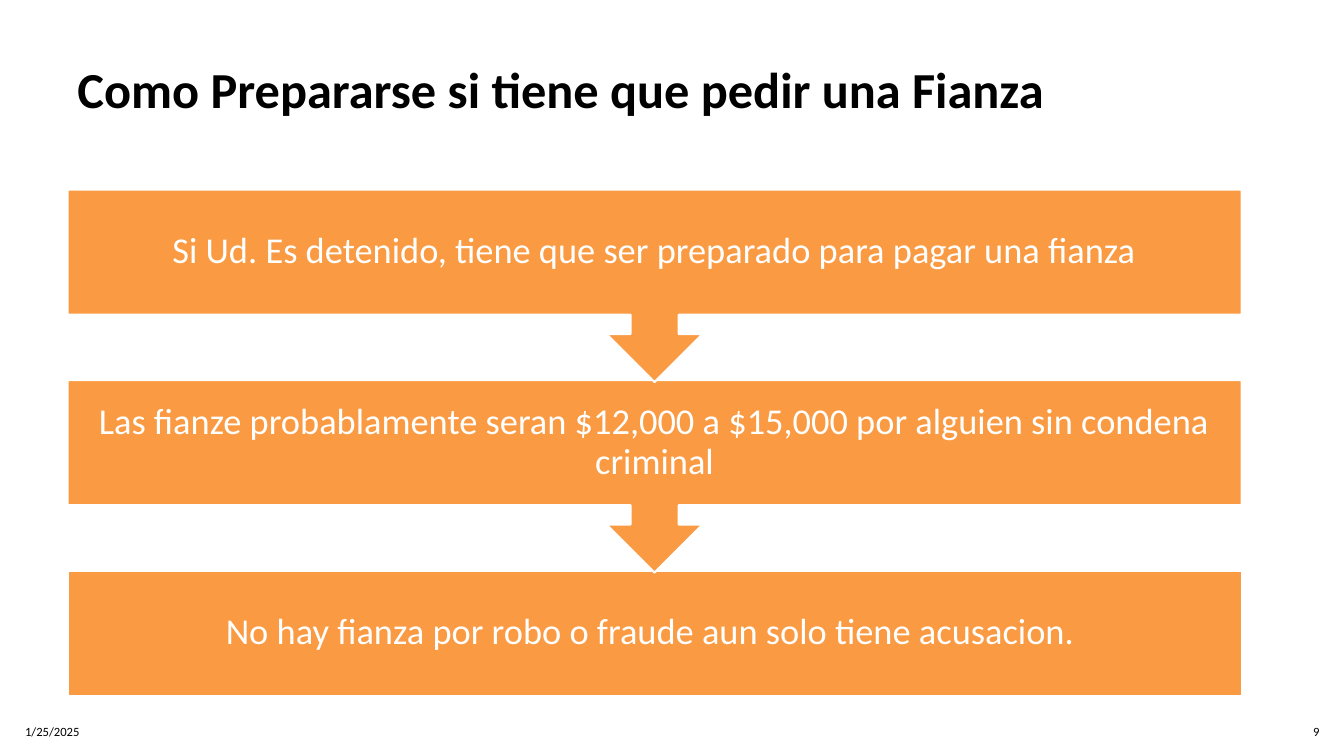
from dataclasses import dataclass

from pptx import Presentation
from pptx.dml.color import RGBColor
from pptx.enum.shapes import MSO_SHAPE
from pptx.enum.text import MSO_ANCHOR, PP_ALIGN
from pptx.slide import Slide
from pptx.text.text import TextFrame
from pptx.util import Pt


@dataclass(frozen=True)
class Theme:
    font: str = "Calibri"
    ink: RGBColor = RGBColor(0, 0, 0)
    paper: RGBColor = RGBColor(255, 255, 255)
    orange: RGBColor = RGBColor(0xFA, 0x9A, 0x42)
    title_size: float = 36
    step_size: float = 26
    footer_size: float = 9


@dataclass(frozen=True)
class Box:
    left: float
    top: float
    width: float
    height: float

    def lengths(self) -> tuple[Pt, Pt, Pt, Pt]:
        return Pt(self.left), Pt(self.top), Pt(self.width), Pt(self.height)


@dataclass(frozen=True)
class Footer:
    text: str
    box: Box
    align: PP_ALIGN


THEME = Theme()
CONTENT_LEFT, CONTENT_WIDTH = 48.2, 838.8
STEP_TOP, STEP_PITCH = 135.4, 136.1
STEP_HEIGHT, CALLOUT_HEIGHT = 89.3, 137.5
STEP_INSET = 14.4

TITLE = "Como Prepararse si tiene que pedir una Fianza"
STEPS = [
    "Si Ud. Es detenido, tiene que ser preparado para pagar una fianza",
    "Las fianze probablamente seran $12,000 a $15,000 por alguien sin condena criminal",
    "No hay fianza por robo o fraude aun solo tiene acusacion. ",
]
FOOTERS = [
    Footer("1/25/2025", Box(10.8, 508.3, 275, 28.8), PP_ALIGN.LEFT),
    Footer("9", Box(915.8, 508.3, 33.8, 28.8), PP_ALIGN.RIGHT),
]


def write_text(frame: TextFrame, text: str, *, size: float, color: RGBColor = THEME.ink,
               bold: bool = False, align: PP_ALIGN = PP_ALIGN.LEFT,
               anchor: MSO_ANCHOR = MSO_ANCHOR.MIDDLE, line_spacing: float = 1.0,
               space_after: float = 0) -> None:
    frame.word_wrap = True
    frame.vertical_anchor = anchor
    paragraph = frame.paragraphs[0]
    paragraph.alignment = align
    paragraph.line_spacing = line_spacing
    paragraph.space_after = Pt(space_after)
    run = paragraph.add_run()
    run.text = text
    run.font.name = THEME.font
    run.font.size = Pt(size)
    run.font.bold = bold
    run.font.color.rgb = color


def add_step(slide: Slide, index: int, text: str) -> None:
    """Draw one step; every step but the last points down to the next."""
    is_last = index == len(STEPS) - 1
    kind = MSO_SHAPE.RECTANGLE if is_last else MSO_SHAPE.DOWN_ARROW_CALLOUT
    box = Box(CONTENT_LEFT, STEP_TOP + index * STEP_PITCH, CONTENT_WIDTH,
              STEP_HEIGHT if is_last else CALLOUT_HEIGHT)
    shape = slide.shapes.add_shape(kind, *box.lengths())
    shape.shadow.inherit = False
    shape.fill.solid()
    shape.fill.fore_color.rgb = THEME.orange
    shape.line.color.rgb = THEME.paper
    shape.line.width = Pt(1.5)
    frame = shape.text_frame
    frame.margin_left = frame.margin_right = Pt(STEP_INSET)
    frame.margin_top = frame.margin_bottom = Pt(STEP_INSET)
    write_text(frame, text, size=THEME.step_size, color=THEME.paper,
               align=PP_ALIGN.CENTER, line_spacing=0.9, space_after=9.1)


def main() -> None:
    presentation = Presentation()
    presentation.slide_width, presentation.slide_height = Pt(960), Pt(540)
    slide = presentation.slides.add_slide(presentation.slide_layouts[6])

    title_box = Box(CONTENT_LEFT, 43.2, CONTENT_WIDTH, 89.3)
    title = slide.shapes.add_textbox(*title_box.lengths())
    write_text(title.text_frame, TITLE, size=THEME.title_size, bold=True,
               anchor=MSO_ANCHOR.TOP, line_spacing=0.9)

    for footer in FOOTERS:
        shape = slide.shapes.add_textbox(*footer.box.lengths())
        write_text(shape.text_frame, footer.text, size=THEME.footer_size,
                   align=footer.align, space_after=6)

    # Bottom step first, so each arrow tip lies over the step below it.
    for index, text in reversed(list(enumerate(STEPS))):
        add_step(slide, index, text)

    presentation.save("out.pptx")


if __name__ == "__main__":
    main()
